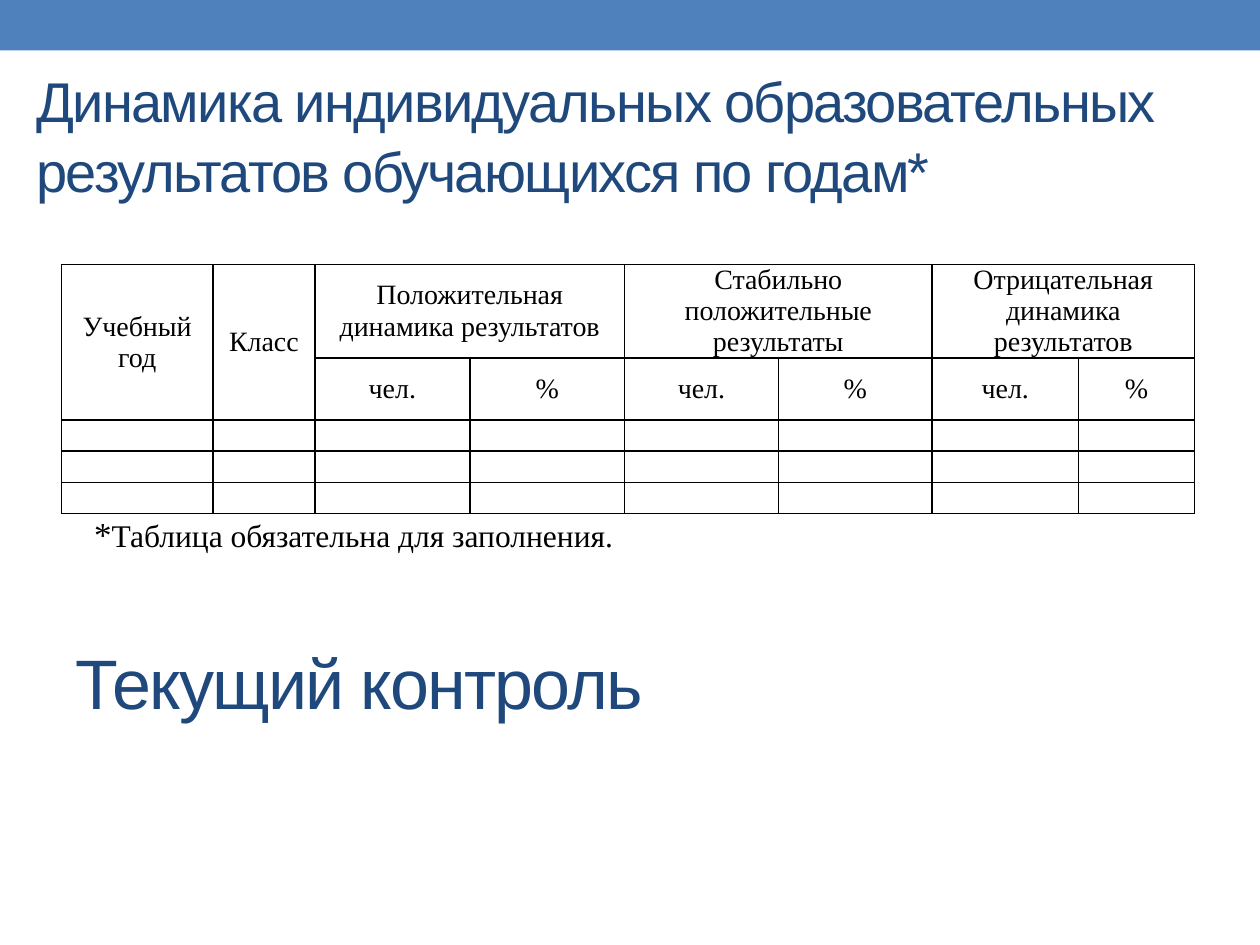
from lxml.etree import SubElement
from pptx import Presentation
from pptx.dml.color import RGBColor
from pptx.enum.shapes import MSO_SHAPE
from pptx.enum.text import MSO_ANCHOR, MSO_AUTO_SIZE, PP_ALIGN
from pptx.oxml.ns import qn
from pptx.util import Cm, Pt

BLUE = RGBColor(0x4F, 0x81, 0xBD)
NAVY = RGBColor(0x1F, 0x49, 0x7D)
BLACK = RGBColor(0, 0, 0)


def add_run(p, text, size, font, color):
    r = p.add_run()
    r.text = text
    r.font.size = Pt(size)
    r.font.name = font
    r.font.color.rgb = color
    return r


def add_heading(sp, text, size):
    tf = sp.text_frame
    tf.word_wrap = True
    tf.auto_size = MSO_AUTO_SIZE.NONE
    tf.vertical_anchor = MSO_ANCHOR.MIDDLE
    p = tf.paragraphs[0]
    p.alignment = PP_ALIGN.LEFT
    p.line_spacing = 1.05
    r = add_run(p, text, size, "Arial", NAVY)
    r.font._element.set("spc", "-100")


prs = Presentation()
prs.slide_width, prs.slide_height = Cm(25.4), Cm(19.05)
s = prs.slides.add_slide(prs.slide_layouts[5])

bar = s.shapes.add_shape(MSO_SHAPE.RECTANGLE, 0, 0, prs.slide_width, Cm(1.02))
bar.shadow.inherit = False
bar.fill.solid()
bar.fill.fore_color.rgb = BLUE
bar.line.fill.background()
s.shapes._spTree.insert(2, bar._element)

title = s.shapes.title
title.left, title.top, title.width, title.height = Cm(0.48), Cm(1.32), Cm(23.62), Cm(2.74)
add_heading(title, "Динамика индивидуальных образовательных результатов обучающихся по годам*", 32)

col_widths = [3.05, 2.06, 3.12, 3.12, 3.1, 3.1, 2.95, 2.34]
row_heights = [1.88, 1.25, 0.62, 0.62, 0.62]
groups = ["Положительная динамика результатов",
          "Стабильно положительные результаты",
          "Отрицательная динамика результатов"]
texts = {(0, 0): "Учебный год", (0, 1): "Класс"}
for i, group in enumerate(groups):
    col = 2 + 2 * i
    texts[0, col] = group
    texts[1, col] = "чел."
    texts[1, col + 1] = "%"

frame = s.shapes.add_table(len(row_heights), len(col_widths), Cm(1.24), Cm(5.33),
                           Cm(sum(col_widths)), Cm(sum(row_heights)))
table = frame.table
table.first_row = table.horz_banding = False
for col, width in enumerate(col_widths):
    table.columns[col].width = Cm(width)
for row, height in enumerate(row_heights):
    table.rows[row].height = Cm(height)

for row in range(len(row_heights)):
    for col in range(len(col_widths)):
        cell = table.cell(row, col)
        cell.margin_left = cell.margin_right = Cm(0.18)
        cell.margin_top = cell.margin_bottom = 0
        cell.vertical_anchor = MSO_ANCHOR.MIDDLE
        p = cell.text_frame.paragraphs[0]
        p.alignment = PP_ALIGN.CENTER
        if (row, col) in texts:
            add_run(p, texts[row, col], 16, "Times New Roman", BLACK)
        else:
            end = SubElement(p._p, qn("a:endParaRPr"), sz="1600")
            SubElement(end, qn("a:latin"), typeface="Times New Roman")
        tcPr = cell._tc.get_or_add_tcPr()
        for side in ("a:lnL", "a:lnR", "a:lnT", "a:lnB"):
            ln = SubElement(tcPr, qn(side), w=str(Pt(1)))
            fill = SubElement(ln, qn("a:solidFill"))
            SubElement(fill, qn("a:srgbClr"), val=str(BLACK))
        cell.fill.background()

for col in (0, 1):
    table.cell(0, col).merge(table.cell(1, col))
for col in (2, 4, 6):
    table.cell(0, col).merge(table.cell(0, col + 1))

note = s.shapes.add_textbox(Cm(1.65), Cm(10.21), Cm(11.07), Cm(1.12))
tf = note.text_frame
tf.word_wrap = False
tf.auto_size = MSO_AUTO_SIZE.SHAPE_TO_FIT_TEXT
p = tf.paragraphs[0]
p.alignment = PP_ALIGN.JUSTIFY
add_run(p, "*", 20, "Times New Roman", BLACK)
add_run(p, "Таблица обязательна для заполнения.", 18, "Times New Roman", BLACK)

heading = s.shapes.add_textbox(Cm(1.27), Cm(12.32), Cm(22.86), Cm(2.74))
add_heading(heading, "Текущий контроль", 40)

prs.save("out.pptx")
